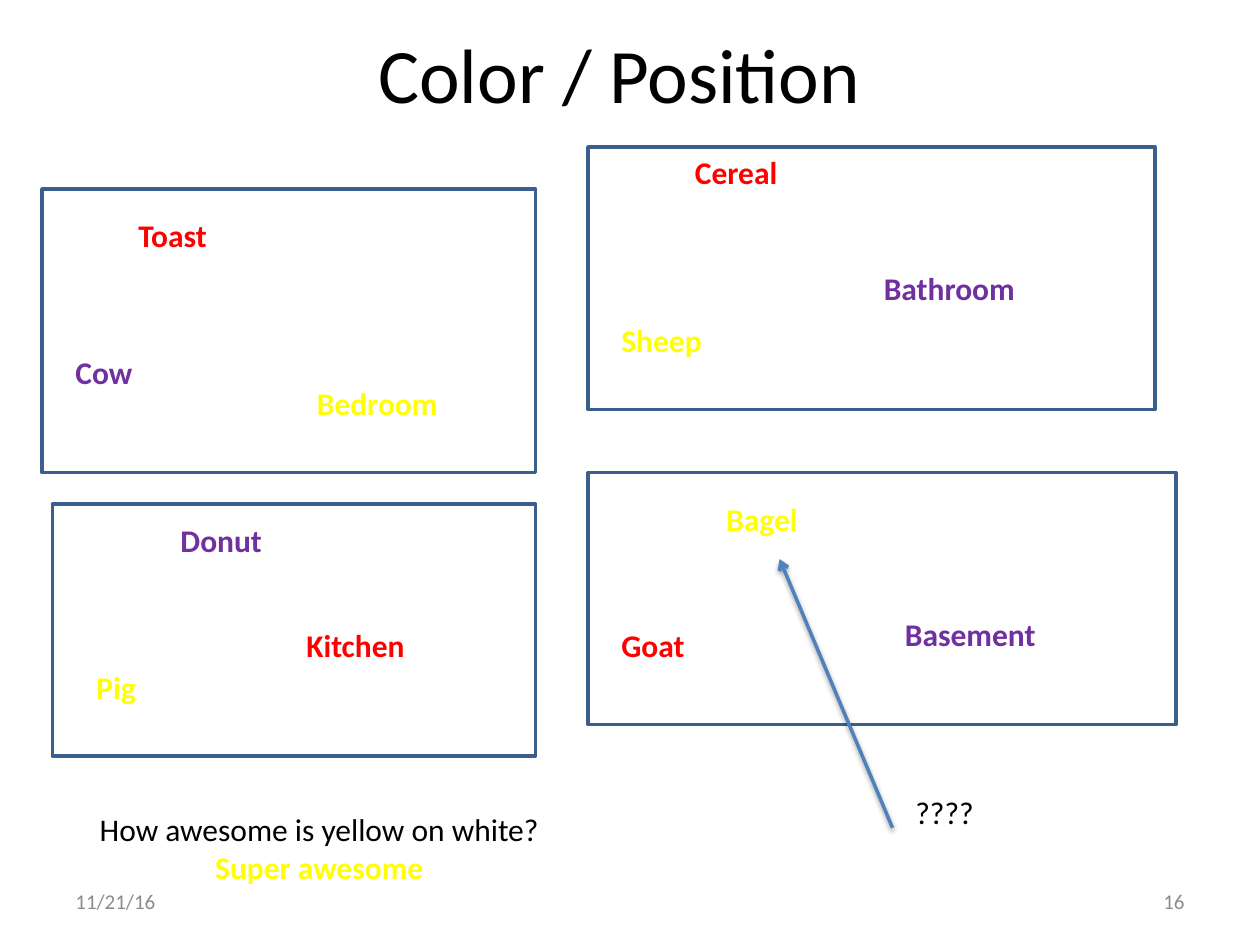
"""Build the Color / Position slide: four framed groups of coloured words."""
from typing import NamedTuple

from lxml import etree
from pptx import Presentation, util as u
from pptx.dml.color import RGBColor
from pptx.enum import shapes, text
from pptx.oxml.ns import qn

COLORS = {
    "black": "000000", "red": "FF0000", "purple": "7030A0", "yellow": "FFFF00",
    "gray": "8C8C8C", "frame": "3A5F8C", "arrow": "4F81BD",
}
FONT = "Calibri"


class Frame(NamedTuple):
    left: float
    top: float
    width: float
    height: float


class Word(NamedTuple):
    label: str
    color: str
    left: float
    top: float
    width: float
    height: float


FRAMES = [
    Frame(24, 108, 282, 162),
    Frame(336, 84, 324, 150),
    Frame(30, 288, 276, 144),
    Frame(336, 270, 336, 144),
]
WORDS = [
    Word("Toast", "red", 72, 120, 83, 39),
    Word("Cow", "purple", 36, 198, 70, 39),
    Word("Bedroom", "yellow", 174, 216, 84, 29),
    Word("Cereal", "red", 390, 84, 95, 39),
    Word("Sheep", "yellow", 348, 180, 61, 29),
    Word("Bathroom", "purple", 498, 150, 138, 39),
    Word("Donut", "purple", 96, 294, 90, 39),
    Word("Bagel", "yellow", 408, 282, 56, 29),
    Word("Pig", "yellow", 48, 378, 37, 29),
    Word("Goat", "red", 348, 354, 74, 39),
    Word("Kitchen", "red", 168, 354, 111, 39),
    Word("Basement", "purple", 510, 348, 140, 39),
]


def rgb(name: str) -> RGBColor:
    """Look up a named colour."""
    return RGBColor.from_string(COLORS[name])


def write(para, content: str, *, color: str = "black", size: float = 18,
          bold: bool = False, align=text.PP_ALIGN.LEFT) -> None:
    """Add one formatted span to a paragraph."""
    para.alignment = align
    span = para.add_run()
    span.text = content
    span.font.name = FONT
    span.font.size = u.Pt(size)
    span.font.bold = bold
    span.font.color.rgb = rgb(color)


def add_label(page, content: str, left: float, top: float, width: float,
              height: float, *, footer: bool = False, **style):
    """Place a text box, either fitted to its text or a fixed footer."""
    box = page.shapes.add_textbox(*map(u.Pt, (left, top, width, height)))
    frame = box.text_frame
    frame.word_wrap = footer
    if footer:
        frame.vertical_anchor = text.MSO_ANCHOR.MIDDLE
    else:
        frame.auto_size = text.MSO_AUTO_SIZE.SHAPE_TO_FIT_TEXT
    write(frame.paragraphs[0], content, **style)
    return box


def add_frame(page, frame: Frame) -> None:
    """Draw an unfilled rectangle."""
    box = page.shapes.add_shape(shapes.MSO_SHAPE.RECTANGLE, *map(u.Pt, frame))
    box.shadow.inherit = False
    box.fill.background()
    box.line.color.rgb = rgb("frame")
    box.line.width = u.Pt(2)


def add_arrow(page, start: tuple[float, float], end: tuple[float, float]) -> None:
    """Draw an arrow with a soft shadow below it."""
    arrow = page.shapes.add_connector(
        shapes.MSO_CONNECTOR.STRAIGHT, *map(u.Pt, (*start, *end)))
    arrow.line.color.rgb = rgb("arrow")
    arrow.line.width = u.Pt(2)
    etree.SubElement(arrow.line._get_or_add_ln(), qn("a:tailEnd"), type="arrow")
    effects = etree.SubElement(arrow._element.spPr, qn("a:effectLst"))
    shadow = etree.SubElement(
        effects, qn("a:outerShdw"), blurRad=str(u.Pt(3.1)), dist=str(u.Pt(1.6)),
        dir="5400000", rotWithShape="0")
    tint = etree.SubElement(shadow, qn("a:srgbClr"), val=COLORS["black"])
    etree.SubElement(tint, qn("a:alpha"), val="38000")


def main() -> None:
    """Assemble and save the deck."""
    deck = Presentation()
    deck.slide_width, deck.slide_height = u.Pt(720), u.Pt(540)
    page = deck.slides.add_slide(deck.slide_layouts.get_by_name("Title Only"))

    title = page.shapes.title
    title.left, title.top, title.width, title.height = map(u.Pt, (30, -3.6, 648, 90))
    title.text_frame.vertical_anchor = text.MSO_ANCHOR.MIDDLE
    write(title.text_frame.paragraphs[0], "Color / Position", size=44,
          align=text.PP_ALIGN.CENTER)

    add_label(page, "11/21/16", 36, 500.5, 168, 28.75, footer=True, size=12, color="gray")
    add_label(page, "16", 516, 500.5, 168, 28.75, footer=True, size=12, color="gray",
              align=text.PP_ALIGN.RIGHT)
    for word in WORDS:
        add_label(page, word.label, *word[2:], color=word.color, bold=True)
    for frame in FRAMES:
        add_frame(page, frame)

    add_arrow(page, (510, 473), (445.5, 319.5))
    add_label(page, "????", 516, 449.5, 48, 29)
    question = add_label(page, "How awesome is yellow on white?", 48, 459.5, 269, 51,
                         align=text.PP_ALIGN.CENTER)
    write(question.text_frame.add_paragraph(), "Super awesome", color="yellow",
          bold=True, align=text.PP_ALIGN.CENTER)
    deck.save("out.pptx")


if __name__ == "__main__":
    main()
